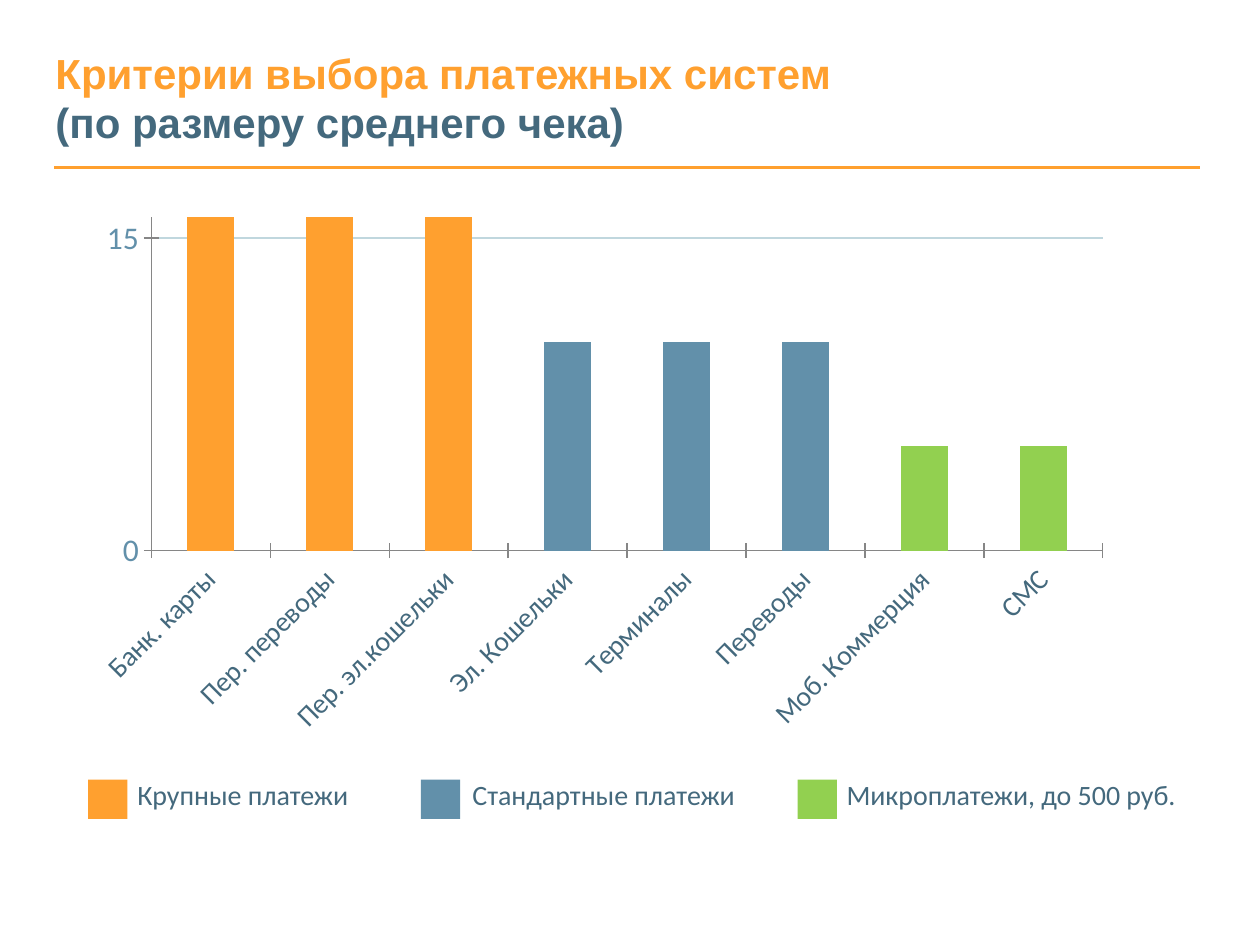
from dataclasses import dataclass

from lxml import etree
from pptx import Presentation
from pptx.chart.data import CategoryChartData
from pptx.dml.color import RGBColor
from pptx.enum.chart import XL_CHART_TYPE, XL_TICK_MARK
from pptx.enum.shapes import MSO_CONNECTOR, MSO_SHAPE
from pptx.oxml.ns import qn
from pptx.util import Pt

COLUMNS = XL_CHART_TYPE.COLUMN_CLUSTERED
CROSS = XL_TICK_MARK.CROSS
STRAIGHT = MSO_CONNECTOR.STRAIGHT
RECTANGLE = MSO_SHAPE.RECTANGLE

ORANGE, BLUE, GREEN = "FFA02F", "6290AA", "92D050"
SLATE, GRID, AXIS = "44697D", "C0D7DE", "868686"
SWATCH_SIZE = 22.5


@dataclass
class Group:
    label: str
    color: str
    value: int
    methods: list[str]
    swatch_left: float
    label_left: float
    label_width: float


GROUPS = [
    Group("Крупные платежи", ORANGE, 20,
          ["Банк. карты", "Пер. переводы", "Пер. эл.кошельки"], 50.4, 78.5, 142.5),
    Group("Стандартные платежи", BLUE, 10,
          ["Эл. Кошельки", "Терминалы", "Переводы"], 240.5, 270, 175),
    Group("Микроплатежи, до 500 руб.", GREEN, 5,
          ["Моб. Коммерция", "СМС"], 455.8, 483.8, 224),
]


def rgb(value: str) -> RGBColor:
    return RGBColor.from_string(value)


def style_font(font, name: str, size: float, color: str, bold: bool = False) -> None:
    font.name = name
    font.size = Pt(size)
    font.bold = bold
    font.color.rgb = rgb(color)


def add_box(page, left: float, top: float, width: float, height: float, text: str):
    box = page.shapes.add_textbox(Pt(left), Pt(top), Pt(width), Pt(height))
    frame = box.text_frame
    frame.margin_left = frame.margin_top = frame.margin_right = frame.margin_bottom = 0
    frame.text = text
    return frame


def add_title(page) -> None:
    frame = add_box(page, 31.7, 28, 653.8, 60.5,
                    "Критерии выбора платежных систем\v(по размеру среднего чека)")
    frame.word_wrap = True
    para = frame.paragraphs[0]
    para.line_spacing = Pt(28)
    for span, color in zip(para.runs, (ORANGE, SLATE)):
        style_font(span.font, "Arial", 24, color, True)


def add_rule(page) -> None:
    rule = page.shapes.add_connector(STRAIGHT, Pt(31), Pt(95.8), Pt(685.5), Pt(95.8))
    rule.line.color.rgb = rgb(ORANGE)
    rule.line.width = Pt(1.5)
    etree.SubElement(rule.element.spPr, qn("a:effectLst"))


def add_legend_entry(page, group: Group) -> None:
    swatch = page.shapes.add_shape(RECTANGLE, Pt(group.swatch_left), Pt(445.5),
                                   Pt(SWATCH_SIZE), Pt(SWATCH_SIZE))
    swatch.shadow.inherit = False
    swatch.fill.solid()
    swatch.fill.fore_color.rgb = rgb(group.color)
    swatch.line.fill.background()
    frame = add_box(page, group.label_left, 444.5, group.label_width, 25, group.label)
    frame.word_wrap = False
    style_font(frame.paragraphs[0].runs[0].font, "Calibri", 16, SLATE)


def place_plot(chart, **fractions: float) -> None:
    plot_area = chart.element.find(".//" + qn("c:plotArea"))
    for old in plot_area.findall(qn("c:layout")):
        plot_area.remove(old)
    layout = etree.Element(qn("c:layout"))
    manual = etree.SubElement(layout, qn("c:manualLayout"))
    settings = {"layoutTarget": "inner", "xMode": "edge", "yMode": "edge", **fractions}
    for tag, value in settings.items():
        etree.SubElement(manual, qn(f"c:{tag}")).set("val", str(value))
    plot_area.insert(0, layout)


def style_axis(axis, size: float, color: str) -> None:
    axis.major_tick_mark = CROSS
    axis.minor_tick_mark = XL_TICK_MARK.NONE
    axis.format.line.color.rgb = rgb(AXIS)
    style_font(axis.tick_labels.font, "Calibri", size, color)


def add_payment_chart(page) -> None:
    bars = [(method, group) for group in GROUPS for method in group.methods]
    data = CategoryChartData()
    data.categories = [method for method, _ in bars]
    data.add_series("Series 1", [group.value for _, group in bars])
    chart = page.shapes.add_chart(COLUMNS, Pt(44.6), Pt(118), Pt(597.6), Pt(307.4), data).chart
    chart.has_legend = False
    chart.has_title = False
    style_font(chart.font, "Calibri", 18, "000000")
    place_plot(chart, x=0.07, y=0.02, w=0.91, h=0.62)

    style_axis(chart.category_axis, 16, SLATE)
    labels = chart.element.find(f".//{qn('c:catAx')}/{qn('c:txPr')}/{qn('a:bodyPr')}")
    labels.set("rot", "-2700000")
    labels.set("vert", "horz")

    values = chart.value_axis
    style_axis(values, 18, BLUE)
    values.minimum_scale, values.maximum_scale, values.major_unit = 0, 16, 15
    values.has_major_gridlines = True
    values.major_gridlines.format.line.color.rgb = rgb(GRID)
    values.major_gridlines.format.line.width = Pt(0.75)

    plot = chart.plots[0]
    plot.gap_width = 150
    plot.vary_by_categories = False
    series = plot.series[0]
    series.format.fill.solid()
    series.format.fill.fore_color.rgb = rgb("4F81BD")
    for index, (_, group) in enumerate(bars):
        fill = series.points[index].format.fill
        fill.solid()
        fill.fore_color.rgb = rgb(group.color)


def main() -> None:
    deck = Presentation()
    deck.slide_width, deck.slide_height = Pt(720), Pt(540)
    page = deck.slides.add_slide(deck.slide_layouts[6])
    add_rule(page)
    add_payment_chart(page)
    for group in GROUPS:
        add_legend_entry(page, group)
    add_title(page)
    deck.save("out.pptx")


if __name__ == "__main__":
    main()
